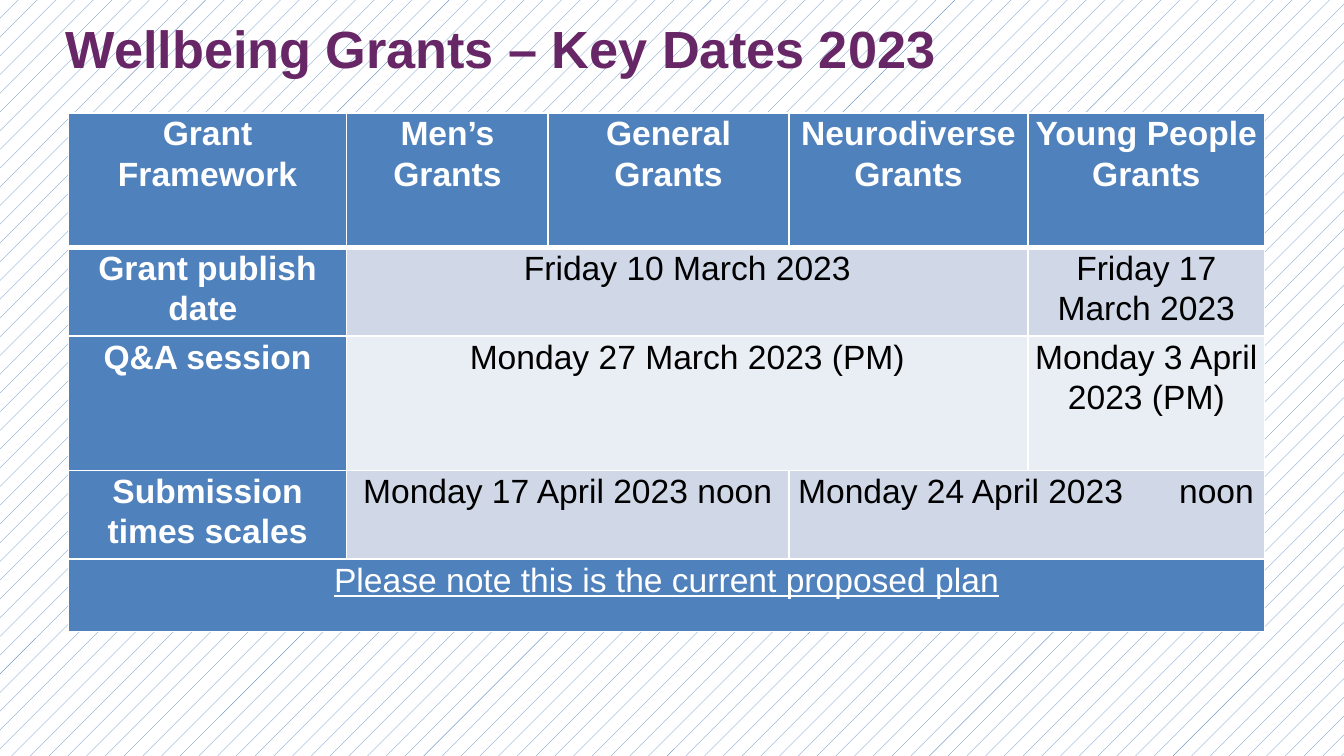
"""Build the Wellbeing Grants key dates slide."""
import pptx
import pptx.dml.color
import pptx.enum.dml
import pptx.enum.text
import pptx.util
from lxml import etree
from pptx.oxml.ns import qn

Inches = pptx.util.Inches
Pt = pptx.util.Pt
RGBColor = pptx.dml.color.RGBColor
ALIGN = pptx.enum.text.PP_ALIGN
ANCHOR = pptx.enum.text.MSO_ANCHOR

PURPLE = RGBColor(0x67, 0x26, 0x66)
BLUE = RGBColor(0x4F, 0x81, 0xBD)
BAND_DARK = RGBColor(0xD0, 0xD8, 0xE8)
BAND_LIGHT = RGBColor(0xE9, 0xED, 0xF4)
WHITE = RGBColor(0xFF, 0xFF, 0xFF)
BLACK = RGBColor(0, 0, 0)


def add_run(paragraph, text, size, color, bold):
    run = paragraph.add_run()
    run.text = text
    run.font.name = "Arial"
    run.font.size = Pt(size)
    run.font.bold = bold
    run.font.color.rgb = color
    return run


def add_border(cell, side, width):
    line = etree.SubElement(cell._tc.get_or_add_tcPr(), qn(f"a:ln{side}"), w=str(Pt(width)))
    line_fill = etree.SubElement(line, qn("a:solidFill"))
    etree.SubElement(line_fill, qn("a:srgbClr"), val=str(WHITE))


presentation = pptx.Presentation()
presentation.slide_width = Inches(10)
presentation.slide_height = Inches(10) * 9 // 16
slide = presentation.slides.add_slide(presentation.slide_layouts[5])

backdrop = slide.background.fill
backdrop.patterned()
backdrop.pattern = pptx.enum.dml.MSO_PATTERN.PERCENT_5
backdrop.fore_color.rgb = BLUE
backdrop.back_color.rgb = WHITE

title = slide.shapes.title
title.left, title.top = Inches(0.39), Inches(0)
title.width, title.height = Inches(9.17), Inches(0.71)
title.text_frame.vertical_anchor = ANCHOR.MIDDLE
heading = title.text_frame.paragraphs[0]
heading.alignment = ALIGN.LEFT
add_run(heading, "Wellbeing Grants – Key Dates 2023", 28, PURPLE, True)

COLUMN_WIDTHS = [2.07, 1.5, 1.79, 1.78, 1.76]
ROW_HEIGHTS = [1, 0.66, 1, 0.66, 0.54]
ROW_FILLS = [BLUE, BAND_DARK, BAND_LIGHT, BAND_DARK, BLUE]
SCHEDULE = [
    [("Grant Framework", 1), ("Men’s Grants", 1), ("General Grants", 1),
     ("Neurodiverse Grants", 1), ("Young People Grants", 1)],
    [("Grant publish date ", 1), ("Friday 10 March 2023", 3), ("Friday 17 March 2023", 1)],
    [("Q&A session", 1), ("Monday 27 March 2023 (PM)", 3), ("Monday 3 April 2023 (PM)", 1)],
    [("Submission times scales", 1), ("Monday 17 April 2023 noon", 2),
     ("Monday 24 April 2023\tnoon", 2)],
    [("Please note this is the current proposed plan", 5)],
]

dates = slide.shapes.add_table(
    len(ROW_HEIGHTS), len(COLUMN_WIDTHS), Inches(0.51), Inches(0.84),
    Inches(sum(COLUMN_WIDTHS)), Inches(sum(ROW_HEIGHTS))).table
for column, width in zip(dates.columns, COLUMN_WIDTHS):
    column.width = Inches(width)
for row, height in zip(dates.rows, ROW_HEIGHTS):
    row.height = Inches(height)

last_row = len(SCHEDULE) - 1
for row_index, entries in enumerate(SCHEDULE):
    column_index = 0
    for text, span in entries:
        cell = dates.cell(row_index, column_index)
        if span > 1:
            cell.merge(dates.cell(row_index, column_index + span - 1))
        is_label = row_index == 0 or column_index == 0
        is_note = row_index == last_row
        for side in "LRTB":
            under_header = (row_index, side) in [(0, "B"), (1, "T")]
            add_border(cell, side, 3 if under_header else 1)
        cell.fill.solid()
        cell.fill.fore_color.rgb = BLUE if is_label else ROW_FILLS[row_index]
        cell.margin_left = cell.margin_right = Inches(0.07 if column_index < 3 else 0)
        cell.margin_top = cell.margin_bottom = Inches(0)

        paragraph = cell.text_frame.paragraphs[0]
        paragraph.alignment = ALIGN.CENTER
        paragraph.line_spacing = 1.07
        paragraph.space_after = Pt(8)
        if "\t" in text:
            paragraph.alignment = ALIGN.LEFT
            cell.margin_left = Inches(0.07)
            tab_stops = etree.SubElement(paragraph._p.get_or_add_pPr(), qn("a:tabLst"))
            etree.SubElement(tab_stops, qn("a:tab"), pos=str(Inches(3.39)), algn="r")
        run = add_run(paragraph, text, 18, WHITE if is_label else BLACK,
                      is_label and not is_note)
        if is_note:
            run.font.underline = True
        column_index += span

presentation.save("out.pptx")
